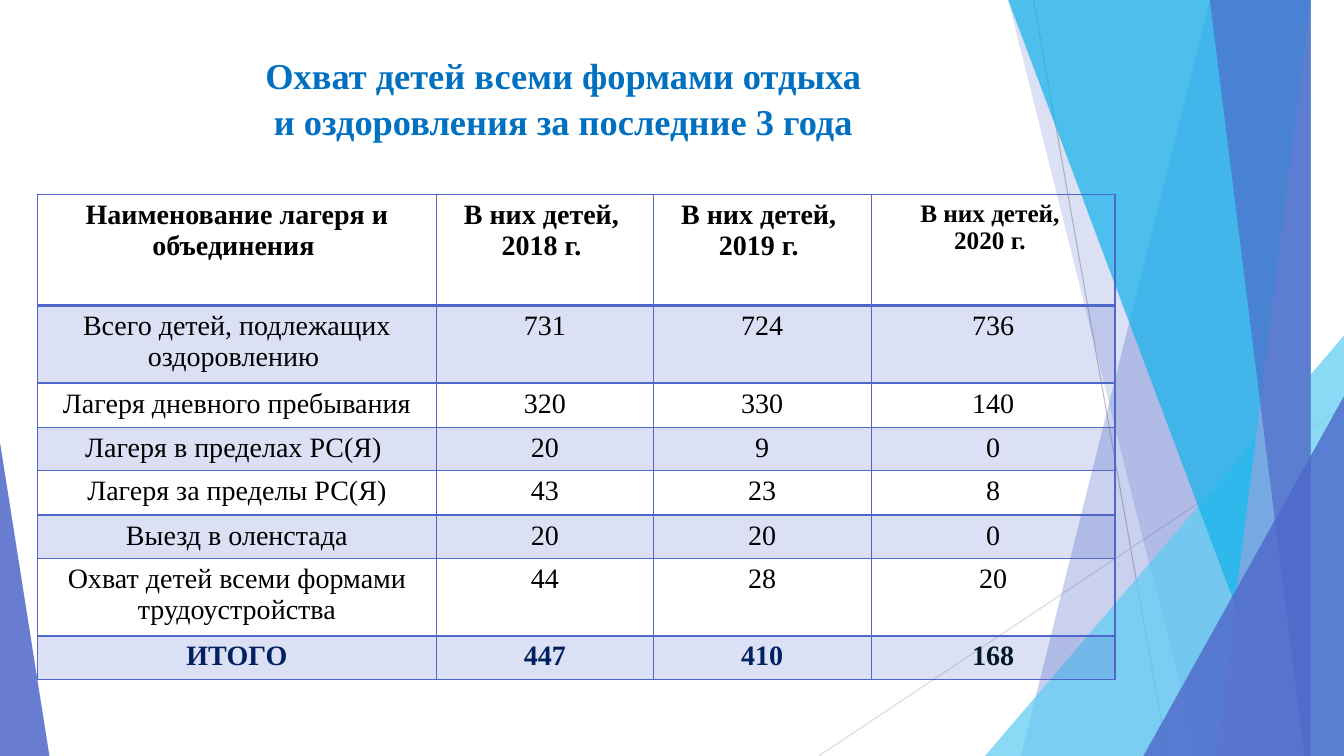
from lxml import etree
from pptx import Presentation, util as u
from pptx.dml.color import RGBColor
from pptx.enum import shapes, text
from pptx.oxml.ns import qn

WIDTH, HEIGHT = 13.33, 7.5
FONT = "Times New Roman"
BLUE = "4E67C8"

# Facets: x of top left, top right, bottom right and bottom left; colour, opacity
FACETS = [
    ((12.28, WIDTH, WIDTH, 10.04), BLUE, 30),
    ((10.5, WIDTH, WIDTH, 11.83), BLUE, 20),
    ((10.21, WIDTH, WIDTH, 12.91), "12B2EB", 70),
    ((13.03, WIDTH, WIDTH, 11.92), "95A4DE", 70),
    ((11.96, WIDTH, WIDTH, 13.18), BLUE, 65),
]
# Corner triangles: left, width, height, apex, colour, opacity
BACK_CORNER = (9.77, 3.56, 4.17, 1, "5ECCF3", 72)
FRONT_CORNERS = [
    (11.34, 1.99, 3.57, 1, BLUE, 80),
    (0, 0.49, 3.11, 0, BLUE, 85),
]

ROWS = [
    ("Наименование лагеря и объединения ", "В них детей, \n2018 г. ",
     "В них детей, \n2019 г. ", "В них детей, \n2020 г. "),
    ("Всего детей, подлежащих оздоровлению ", "731", "724", "736"),
    ("Лагеря дневного пребывания", "320", "330", "140"),
    ("Лагеря в пределах РС(Я) ", "20", "9", "0"),
    ("Лагеря за пределы РС(Я)", "43", "23", "8"),
    ("Выезд в оленстада", "20", "20", "0"),
    ("Охват детей всеми формами трудоустройства", "44", "28", "20"),
    ("ИТОГО", "447", "410", "168"),
]
COLUMN_WIDTHS = [3.96, 2.15, 2.16, 2.42]
ROW_HEIGHTS = [1.1, 0.77, 0.44, 0.43, 0.44, 0.43, 0.77, 0.43]


def colour(code):
    return RGBColor.from_string(code)


def paint(fill, properties, code, opacity):
    """Fill solidly; properties is the XML element that holds the fill."""
    fill.solid()
    fill.fore_color.rgb = colour(code)
    tint = properties.find(qn("a:solidFill")).find(qn("a:srgbClr"))
    etree.SubElement(tint, qn("a:alpha"), val=str(opacity * 1000))


def finish_shape(shape, code, opacity):
    shape.shadow.inherit = False
    shape.line.fill.background()
    paint(shape.fill, shape.element.spPr, code, opacity)


def format_text(frame, size, code, bold):
    for para in frame.paragraphs:
        para.alignment = text.PP_ALIGN.CENTER
        for span in para.runs:
            span.font.name = FONT
            span.font.size = u.Pt(size)
            span.font.bold = bold
            span.font.color.rgb = colour(code)


def add_thin_line(page, start, end, code):
    line = page.shapes.add_connector(
        shapes.MSO_CONNECTOR.STRAIGHT, *map(u.Inches, start + end))
    line.line.color.rgb = colour(code)
    line.line.width = u.Pt(0.75)
    etree.SubElement(line.element.spPr, qn("a:effectLst"))


def add_facet(page, corners, code, opacity):
    points = list(zip(corners, (0, 0, HEIGHT, HEIGHT)))
    builder = page.shapes.build_freeform(*points[0], scale=u.Inches(1))
    builder.add_line_segments(points[1:], close=True)
    finish_shape(builder.convert_to_shape(), code, opacity)


def add_corner(page, left, width, height, apex, code, opacity):
    corner = page.shapes.add_shape(
        shapes.MSO_SHAPE.ISOSCELES_TRIANGLE, u.Inches(left),
        u.Inches(HEIGHT - height), u.Inches(width), u.Inches(height))
    corner.adjustments[0] = apex
    finish_shape(corner, code, opacity)


def add_backdrop(page):
    add_thin_line(page, (10.25, 0), (11.58, HEIGHT), "BFBFBF")
    add_thin_line(page, (WIDTH, 4.03), (8.12, HEIGHT), "D9D9D9")
    for facet in FACETS[:2]:
        add_facet(page, *facet)
    add_corner(page, *BACK_CORNER)
    for facet in FACETS[2:]:
        add_facet(page, *facet)
    for corner in FRONT_CORNERS:
        add_corner(page, *corner)


def add_title(page, left, top, width, height):
    title = page.shapes.title
    title.left, title.top = u.Inches(left), u.Inches(top)
    title.width, title.height = u.Inches(width), u.Inches(height)
    frame = title.text_frame
    frame.text = ("Охват детей всеми формами отдыха \n"
                  "и оздоровления за последние 3 года ")
    frame.word_wrap = True
    frame.auto_size = text.MSO_AUTO_SIZE.NONE
    frame.vertical_anchor = text.MSO_ANCHOR.TOP
    format_text(frame, 26, "0070C0", True)
    for para in frame.paragraphs:
        para.line_spacing = 1.05


def add_borders(cell, top, bottom):
    """Draw all four edges; top and bottom are widths in points."""
    properties = cell._tc.get_or_add_tcPr()
    for side, width in (("L", 1), ("R", 1), ("T", top), ("B", bottom)):
        edge = etree.SubElement(properties, qn(f"a:ln{side}"),
                                w=str(u.Pt(width)))
        fill = etree.SubElement(edge, qn("a:solidFill"))
        etree.SubElement(fill, qn("a:srgbClr"), val=BLUE)


def format_cell(cell, row, column):
    header, total = row == 0, row == len(ROWS) - 1
    last_column = column == len(COLUMN_WIDTHS) - 1
    add_borders(cell, top=2 if row == 1 else 1, bottom=2 if header else 1)
    if row % 2:
        paint(cell.fill, cell._tc.tcPr, BLUE, 20)
    else:
        cell.fill.background()
    code = "000000"
    if total:
        code = "031828" if last_column else "002060"
    size = 18 if header and last_column else 20
    format_text(cell.text_frame, size, code, header or total)


def add_camp_table(page, left, top):
    frame = page.shapes.add_table(
        len(ROWS), len(COLUMN_WIDTHS), u.Inches(left), u.Inches(top),
        u.Inches(sum(COLUMN_WIDTHS)), u.Inches(sum(ROW_HEIGHTS)))
    table = frame.table
    table.first_row = table.horz_banding = False
    for column, width in zip(table.columns, COLUMN_WIDTHS):
        column.width = u.Inches(width)
    for row, height in zip(table.rows, ROW_HEIGHTS):
        row.height = u.Inches(height)
    for row, values in enumerate(ROWS):
        for column, value in enumerate(values):
            cell = table.cell(row, column)
            cell.text_frame.text = value
            format_cell(cell, row, column)


def main():
    deck = Presentation()
    deck.slide_width, deck.slide_height = u.Inches(WIDTH), u.Inches(HEIGHT)
    page = deck.slides.add_slide(deck.slide_layouts.get_by_name("Title Only"))
    add_backdrop(page)
    add_title(page, 0, 0.46, 11.27, 0.98)
    add_camp_table(page, 0.37, 1.93)
    deck.save("out.pptx")


if __name__ == "__main__":
    main()
